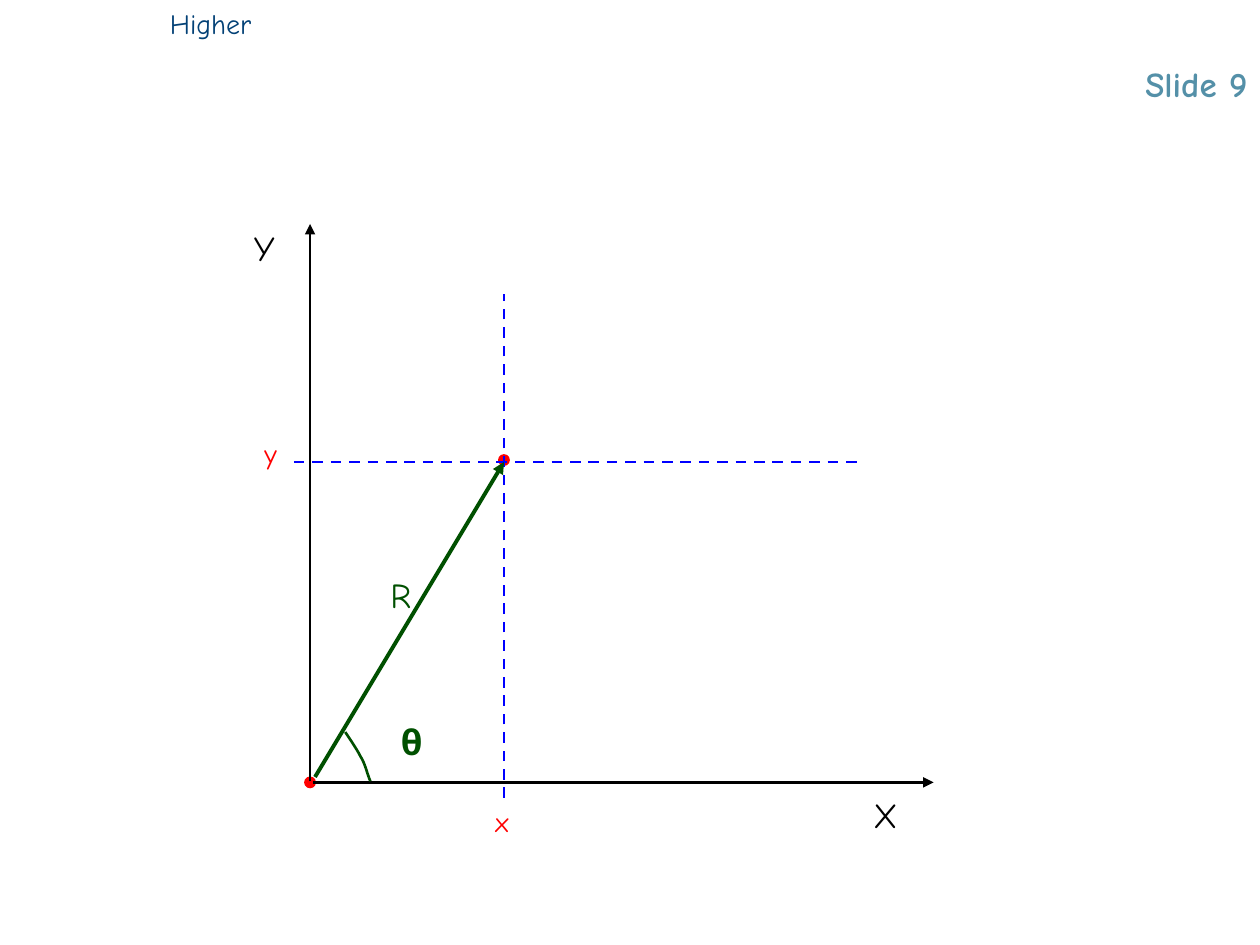
from pptx import Presentation
from pptx.dml.color import RGBColor
from pptx.enum.dml import MSO_LINE_DASH_STYLE as Dash
from pptx.enum.shapes import MSO_CONNECTOR as Connector, MSO_SHAPE as Shape
from pptx.enum.text import MSO_ANCHOR as Anchor, PP_ALIGN as Align
from pptx.oxml.xmlchemy import OxmlElement
from pptx.util import Pt

COLORS = {
    "axis": "000000",
    "guide": "0000FF",
    "mark": "FF0000",
    "vector": "005000",
    "level": "034176",
    "number": "5490A8",
}
FONT = "Comic Neue"
ORIGIN = (177.2, 447.1)
TIP = (288, 264)
ARC_START = (197.3, 418.3)
ARC_CURVES = [
    ((198.7, 420.5), (203.8, 427.7), (205.9, 432)),
    ((208.8, 436.3), (210.2, 443.5), (211.7, 446.4)),
]


def color(key):
    return RGBColor.from_string(COLORS[key])


def add_label(slide, text, left, top, width, height, size, key, bold=False):
    label = slide.shapes.add_textbox(Pt(left), Pt(top), Pt(width), Pt(height))
    frame = label.text_frame
    frame.word_wrap = True
    frame.text = text
    font = frame.paragraphs[0].font
    font.name = FONT
    font.size = Pt(size)
    font.bold = bold
    font.color.rgb = color(key)
    return frame


def add_line(slide, start, end, key, width=1.5, arrow=False, dashed=False):
    ends = [Pt(value) for value in (*start, *end)]
    connector = slide.shapes.add_connector(Connector.STRAIGHT, *ends)
    connector.line.color.rgb = color(key)
    connector.line.width = Pt(width)
    if dashed:
        connector.line.dash_style = Dash.DASH
    if arrow:
        head = OxmlElement("a:tailEnd")
        head.set("type", "triangle")
        connector.line._get_or_add_ln().append(head)
    connector._element.spPr.append(OxmlElement("a:effectLst"))


def add_dot(slide, x, y, diameter=6):
    radius = diameter / 2
    dot = slide.shapes.add_shape(
        Shape.OVAL, Pt(x - radius), Pt(y - radius), Pt(diameter), Pt(diameter))
    dot.shadow.inherit = False
    dot.fill.solid()
    dot.fill.fore_color.rgb = color("mark")
    dot.line.color.rgb = color("mark")
    dot.line.width = Pt(0.75)


def curve_points(points, steps=8):
    for step in range(1, steps + 1):
        t = step / steps
        weights = ((1 - t) ** 3, 3 * t * (1 - t) ** 2, 3 * t * t * (1 - t), t ** 3)
        yield tuple(
            Pt(sum(w * value for w, value in zip(weights, axis)))
            for axis in zip(*points))


def add_angle_arc(slide):
    builder = slide.shapes.build_freeform(Pt(ARC_START[0]), Pt(ARC_START[1]))
    start = ARC_START
    for curve in ARC_CURVES:
        builder.add_line_segments(list(curve_points((start, *curve))), close=False)
        start = curve[-1]
    arc = builder.convert_to_shape()
    arc.shadow.inherit = False
    arc.fill.background()
    arc.line.color.rgb = color("vector")
    arc.line.width = Pt(1.5)


def main():
    deck = Presentation()
    deck.slide_width, deck.slide_height = Pt(720), Pt(540)
    slide = deck.slides.add_slide(deck.slide_layouts[6])

    number = add_label(slide, "Slide 9", 120, 12, 600, 55.5, 20, "number", bold=True)
    number.paragraphs[0].alignment = Align.RIGHT
    number.vertical_anchor = Anchor.BOTTOM
    number.margin_bottom = Pt(8)
    add_label(slide, "Higher", 90, 0, 258, 26.5, 16, "level")

    add_dot(slide, *ORIGIN)
    add_dot(slide, TIP[0], 262.9)
    add_line(slide, (179, ORIGIN[1]), (533.5, ORIGIN[1]), "axis", arrow=True)
    add_line(slide, (ORIGIN[0], 446.5), (ORIGIN[0], 128), "axis", arrow=True)
    add_line(slide, (TIP[0], 456), (TIP[0], 168), "guide", dashed=True)
    add_line(slide, (168, TIP[1]), (492, TIP[1]), "guide", dashed=True)
    add_line(slide, (180, 444), TIP, "vector", width=2.25, arrow=True)
    add_angle_arc(slide)

    for text, left, top, height, size, key, bold in (
        ("X", 492, 450, 31, 20, "axis", False),
        ("Y", 138, 126, 31, 20, "axis", False),
        ("x", 276, 456, 26.5, 16, "mark", False),
        ("y", 144, 246, 26.5, 16, "mark", False),
        ("R", 216, 324, 31, 20, "vector", False),
        ("θ", 222, 408, 31, 20, "vector", True),
    ):
        add_label(slide, text, left, top, 54, height, size, key, bold)

    deck.save("out.pptx")


if __name__ == "__main__":
    main()
